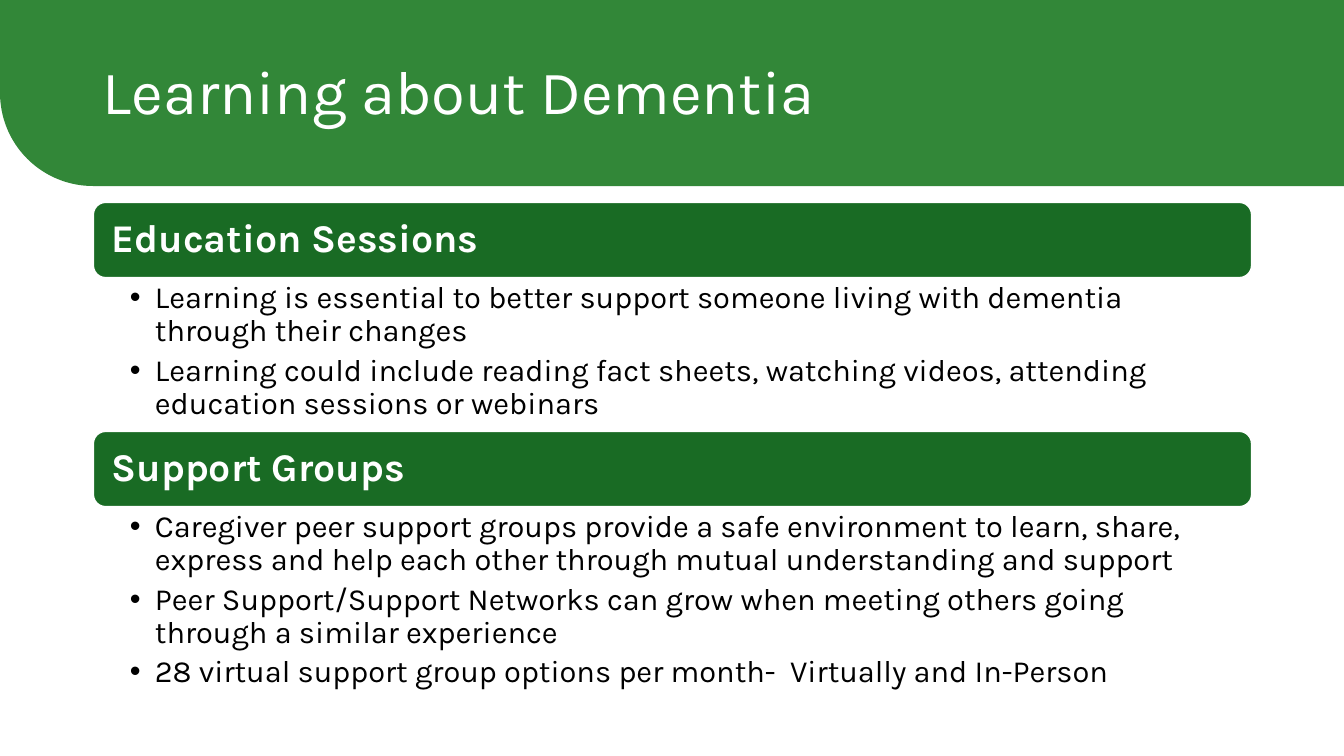
"""Build the Learning about Dementia slide."""
from dataclasses import dataclass

from lxml import etree
from pptx import Presentation
from pptx.dml.color import RGBColor
from pptx.enum.shapes import MSO_SHAPE
from pptx.enum.text import MSO_ANCHOR, MSO_AUTO_SIZE, PP_ALIGN
from pptx.oxml.ns import qn
from pptx.util import Pt

ROUND_RECT = MSO_SHAPE.ROUNDED_RECTANGLE
ROUND_ONE = MSO_SHAPE.ROUND_1_RECTANGLE
TOP, MIDDLE = MSO_ANCHOR.TOP, MSO_ANCHOR.MIDDLE
LEFT = PP_ALIGN.LEFT
NO_FIT = MSO_AUTO_SIZE.NONE

PX = 914400 / 100.8
COLORS = {"banner": "328738", "header": "196B24", "light": "FFFFFF", "text": "000000"}
FORMATS = {
    "title": {"size": Pt(44), "name": "Karla", "bold": False},
    "header": {"size": Pt(28), "name": "Karla", "bold": True},
    "bullet": {"size": Pt(22), "name": "Karla", "bold": False},
}
SLIDE_W, SLIDE_H = 1344, 756
MARGIN, CARD_W, HEADER_H, FIRST_TOP = 93, 1159, 76, 202


@dataclass
class Section:
    """A header bar and the list below it."""
    heading: str
    body_h: int
    bullets: list[str]


SECTIONS = [
    Section("Education Sessions", 153, [
        "Learning is essential to better support someone living with dementia "
        "through their changes",
        "Learning could include reading fact sheets, watching videos, attending "
        "education sessions or webinars",
    ]),
    Section("Support Groups", 195, [
        "Caregiver peer support groups provide a safe environment to learn, share, "
        "express and help each other through mutual understanding and support",
        "Peer Support/Support Networks can grow when meeting others going "
        "through a similar experience",
        "28 virtual support group options per month-  Virtually and In-Person",
    ]),
]


def px(n: int) -> int:
    """Turn pixels into EMU."""
    return round(n * PX)


def set_attrs(target, values: dict) -> None:
    """Set every attribute in values on target."""
    for name, value in values.items():
        setattr(target, name, value)


def place(sp, x: int, y: int, w: int, h: int) -> None:
    """Move and size a shape in pixels."""
    set_attrs(sp, {"left": px(x), "top": px(y), "width": px(w), "height": px(h)})


def set_frame(tf, anchor, left: int, top: int, right: int, bottom: int) -> None:
    """Set the anchor, wrapping and insets of a text frame."""
    set_attrs(tf, {
        "word_wrap": True, "auto_size": NO_FIT, "vertical_anchor": anchor,
        "margin_left": px(left), "margin_top": px(top),
        "margin_right": px(right), "margin_bottom": px(bottom),
    })


def write(p, text: str, style: str, color: str, after: float = 0) -> None:
    """Write one formatted paragraph."""
    set_attrs(p, {"alignment": LEFT, "line_spacing": 0.9,
                  "space_before": Pt(0), "space_after": Pt(after)})
    r = p.add_run()
    r.text = text
    set_attrs(r.font, FORMATS[style])
    r.font.color.rgb = RGBColor.from_string(COLORS[color])


def add_bullet(p) -> None:
    """Give a paragraph a round bullet and a hanging indent."""
    pPr = p._p.get_or_add_pPr()
    pPr.set("marL", str(px(25)))
    pPr.set("indent", str(px(-25)))
    etree.SubElement(pPr, qn("a:buFont")).set("typeface", "Arial")
    etree.SubElement(pPr, qn("a:buChar")).set("char", "•")


def add_block(s, kind, color: str, x: int, y: int, w: int, h: int):
    """Add a filled shape without a shadow or line."""
    sp = s.shapes.add_shape(kind, px(x), px(y), px(w), px(h))
    sp.shadow.inherit = False
    sp.fill.solid()
    sp.fill.fore_color.rgb = RGBColor.from_string(COLORS[color])
    sp.line.fill.background()
    return sp


def add_banner(s) -> None:
    """Add the green banner behind the title."""
    sp = add_block(s, ROUND_ONE, "banner", 0, 0, SLIDE_W, 186)
    sp.rotation = 180
    sp.adjustments[0] = 0.5
    s.shapes._spTree.insert(2, sp._element)


def fill_title(s, text: str) -> None:
    """Place and write the title."""
    sp = s.shapes.title
    place(sp, MARGIN, 40, 857, 109)
    set_frame(sp.text_frame, MIDDLE, 10, 5, 10, 5)
    write(sp.text_frame.paragraphs[0], text, "title", "light")


def add_section(s, section: Section, body, y: int) -> None:
    """Draw a header bar and fill the list below it."""
    sp = add_block(s, ROUND_RECT, "header", MARGIN, y, CARD_W, HEADER_H)
    sp.line.color.rgb = RGBColor.from_string(COLORS["light"])
    sp.line.width = Pt(1.5)
    set_frame(sp.text_frame, MIDDLE, 15, 12, 15, 12)
    write(sp.text_frame.paragraphs[0], section.heading, "header", "light")

    place(body, MARGIN, y + HEADER_H, CARD_W, section.body_h)
    tf = body.text_frame
    set_frame(tf, TOP, 37, 4, 22, 4)
    for i, text in enumerate(section.bullets):
        p = tf.add_paragraph() if i else tf.paragraphs[0]
        p.level = 1
        add_bullet(p)
        write(p, text, "bullet", "text", 4.4)


def main() -> None:
    """Build and save the slide."""
    prs = Presentation()
    prs.slide_width, prs.slide_height = px(SLIDE_W), px(SLIDE_H)
    s = prs.slides.add_slide(prs.slide_layouts[3])
    add_banner(s)
    fill_title(s, "Learning about Dementia")
    bodies = [ph for ph in s.placeholders if ph.placeholder_format.idx > 0]
    y = FIRST_TOP
    for section, body in zip(SECTIONS, bodies):
        add_section(s, section, body, y)
        y += HEADER_H + section.body_h
    prs.save("out.pptx")


if __name__ == "__main__":
    main()
